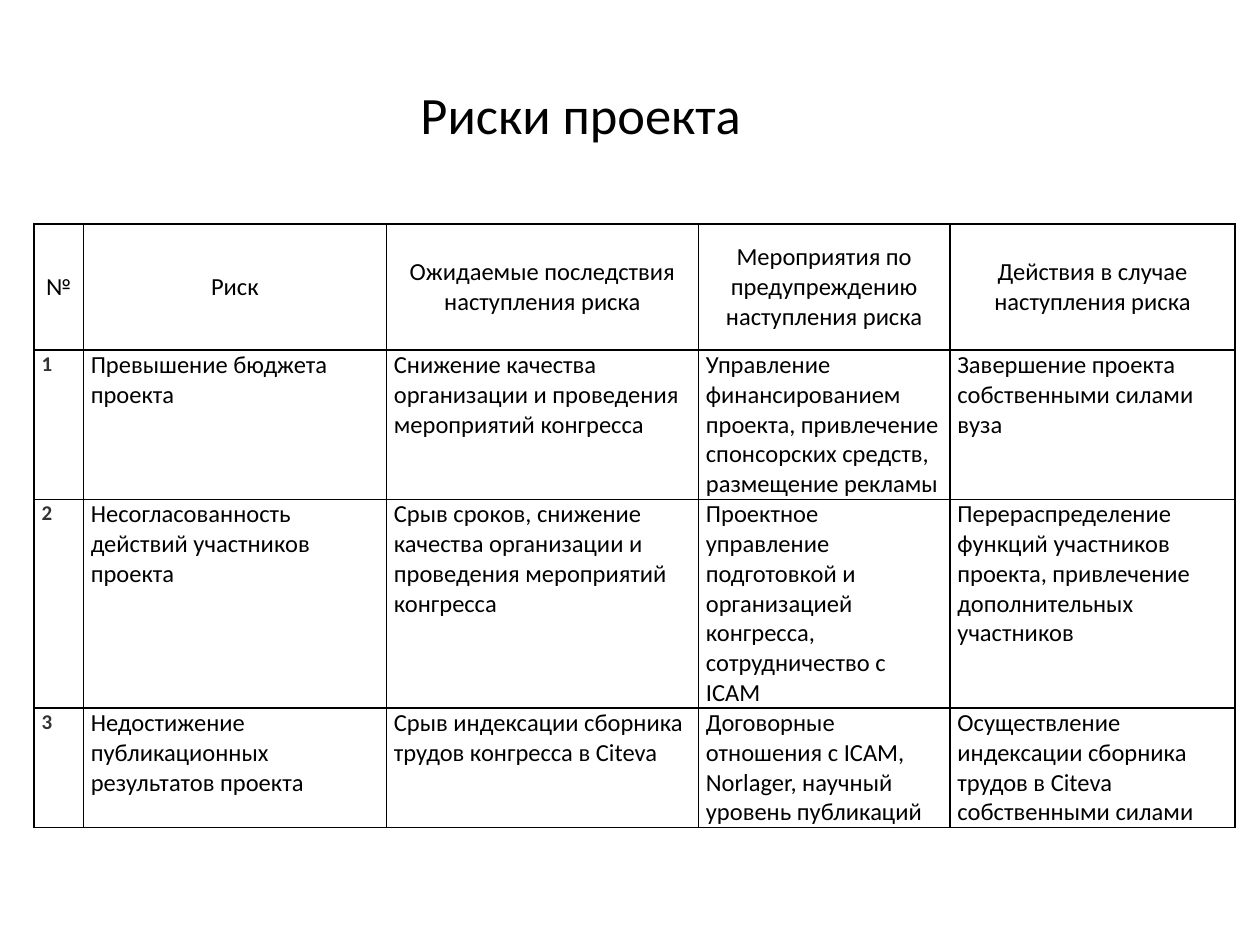
from dataclasses import astuple, dataclass

import lxml.etree
import pptx
import pptx.dml.color
import pptx.enum.text
import pptx.oxml.ns
import pptx.util
from pptx.util import Cm, Pt

BLACK = pptx.dml.color.RGBColor(0x00, 0x00, 0x00)
GREY = pptx.dml.color.RGBColor(0x33, 0x33, 0x33)
FONT = "Calibri"
CENTER = pptx.enum.text.PP_ALIGN.CENTER
LEFT = pptx.enum.text.PP_ALIGN.LEFT
MIDDLE = pptx.enum.text.MSO_ANCHOR.MIDDLE
TOP = pptx.enum.text.MSO_ANCHOR.TOP


@dataclass
class Risk:
    number: str
    name: str
    consequences: str
    prevention: str
    response: str


@dataclass
class CellStyle:
    size: float
    color: pptx.dml.color.RGBColor
    bold: bool
    align: int
    anchor: int
    side_margin: float
    top_margin: float
    bottom_margin: float


HEADER_STYLE = CellStyle(14, BLACK, False, CENTER, MIDDLE, 0.2, 0.13, 0.13)
NUMBER_STYLE = CellStyle(12, GREY, True, LEFT, TOP, 0.15, 0.03, 0)
BODY_STYLE = CellStyle(14, BLACK, False, LEFT, TOP, 0.15, 0, 0)

COLUMN_WIDTHS = (0.99, 6.11, 6.29, 5.07, 5.75)
ROW_HEIGHTS = (2.54, 3, 4.2, 2.4)
ROWS = (
    Risk("№", "Риск", "Ожидаемые последствия наступления риска",
         "Мероприятия по предупреждению наступления риска",
         "Действия в случае наступления риска"),
    Risk("1", "Превышение бюджета проекта",
         "Снижение качества организации и проведения мероприятий конгресса",
         "Управление финансированием проекта, привлечение спонсорских средств, "
         "размещение рекламы",
         "Завершение проекта собственными силами вуза"),
    Risk("2", "Несогласованность действий участников проекта",
         "Срыв сроков, снижение качества организации и проведения "
         "мероприятий конгресса",
         "Проектное управление подготовкой и организацией конгресса, "
         "сотрудничество с ICAM",
         "Перераспределение функций участников проекта, привлечение "
         "дополнительных участников"),
    Risk("3", "Недостижение публикационных результатов проекта",
         "Срыв индексации сборника трудов конгресса в Citeva",
         "Договорные отношения с ICAM, Norlager, научный уровень публикаций",
         "Осуществление индексации сборника трудов в Citeva "
         "собственными силами"),
)


def format_runs(paragraph, size: float, color, bold: bool = False) -> None:
    for span in paragraph.runs:
        span.font.name = FONT
        span.font.size = Pt(size)
        span.font.bold = bold
        span.font.color.rgb = color


def add_borders(cell) -> None:
    properties = cell._tc.get_or_add_tcPr()
    for side in ("lnL", "lnR", "lnT", "lnB"):
        line = lxml.etree.SubElement(
            properties, pptx.oxml.ns.qn(f"a:{side}"), w=str(Pt(1)))
        fill = lxml.etree.SubElement(line, pptx.oxml.ns.qn("a:solidFill"))
        lxml.etree.SubElement(
            fill, pptx.oxml.ns.qn("a:srgbClr"), val=str(BLACK))


def fill_cell(cell, text: str, style: CellStyle) -> None:
    add_borders(cell)
    cell.fill.background()
    cell.vertical_anchor = style.anchor
    cell.margin_left = cell.margin_right = Cm(style.side_margin)
    cell.margin_top = Cm(style.top_margin)
    cell.margin_bottom = Cm(style.bottom_margin)
    cell.text_frame.text = text
    paragraph = cell.text_frame.paragraphs[0]
    paragraph.alignment = style.align
    format_runs(paragraph, style.size, style.color, style.bold)


def add_title(page, text: str) -> None:
    box = page.shapes.title
    box.left, box.top, box.width, box.height = (
        Cm(0.28), Cm(1.52), Cm(22.86), Cm(1.55))
    frame = box.text_frame
    frame.text = text
    frame.auto_size = pptx.enum.text.MSO_AUTO_SIZE.NONE
    frame.vertical_anchor = MIDDLE
    frame.paragraphs[0].alignment = CENTER
    format_runs(frame.paragraphs[0], 30, BLACK)


def add_risk_table(page) -> None:
    table = page.shapes.add_table(
        len(ROWS), len(COLUMN_WIDTHS), Cm(0.69), Cm(4.52),
        Cm(sum(COLUMN_WIDTHS)), Cm(sum(ROW_HEIGHTS))).table
    table.first_row = False
    table.horz_banding = False
    for column, width in zip(table.columns, COLUMN_WIDTHS):
        column.width = Cm(width)
    for row, height in zip(table.rows, ROW_HEIGHTS):
        row.height = Cm(height)
    for row_index, risk in enumerate(ROWS):
        for column_index, text in enumerate(astuple(risk)):
            if row_index == 0:
                style = HEADER_STYLE
            else:
                style = NUMBER_STYLE if column_index == 0 else BODY_STYLE
            fill_cell(table.cell(row_index, column_index), text, style)


def main() -> None:
    deck = pptx.Presentation()
    deck.slide_width, deck.slide_height = Cm(25.4), Cm(19.05)
    # Title-only layout
    page = deck.slides.add_slide(deck.slide_layouts[5])
    add_title(page, "Риски проекта")
    add_risk_table(page)
    deck.save("out.pptx")


if __name__ == "__main__":
    main()
